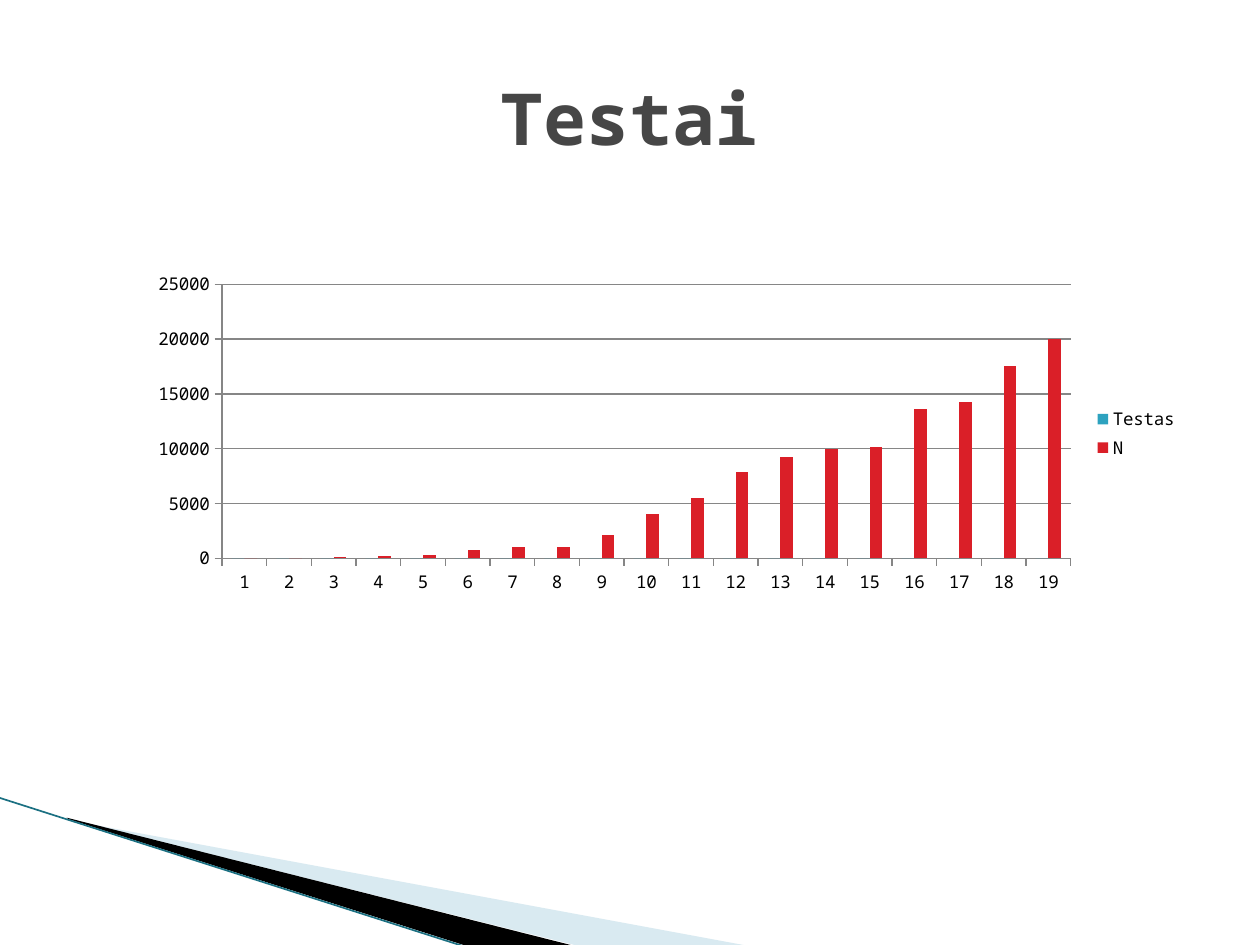
"""Build the test results slide with its column chart and corner ribbon."""
from lxml import etree
from pptx import Presentation
from pptx.chart.data import CategoryChartData
from pptx.dml.color import RGBColor
from pptx.enum.chart import XL_CHART_TYPE, XL_LEGEND_POSITION, XL_TICK_MARK
from pptx.enum.shapes import MSO_CONNECTOR
from pptx.enum.text import MSO_ANCHOR, PP_ALIGN
from pptx.oxml.ns import qn
from pptx.util import Inches, Pt

COLUMN = XL_CHART_TYPE.COLUMN_CLUSTERED
RIGHT = XL_LEGEND_POSITION.RIGHT
OUTSIDE, NONE = XL_TICK_MARK.OUTSIDE, XL_TICK_MARK.NONE
STRAIGHT = MSO_CONNECTOR.STRAIGHT
MIDDLE, CENTER = MSO_ANCHOR.MIDDLE, PP_ALIGN.CENTER

THEME = {
    "font": "Noto Sans Mono",
    "title": Pt(41),
    "label": Pt(10),
    "dark": RGBColor(0x46, 0x46, 0x46),
    "black": RGBColor(0, 0, 0),
    "grid": RGBColor(0x86, 0x86, 0x86),
    "pale": RGBColor(0xA0, 0xCB, 0xDC),
    "edge": RGBColor(0x1B, 0x70, 0x82),
    "bars": [RGBColor(0x2D, 0xA2, 0xBF), RGBColor(0xDA, 0x1F, 0x28)],
}


def assign(item, values):
    for name, value in values.items():
        setattr(item, name, value)


def reframe(shape, left, top, width, height):
    shift = {"x": shape.left - left, "y": shape.top - top}
    outline = shape._element.spPr.find(".//" + qn("a:path"))
    outline.set("w", str(width))
    outline.set("h", str(height))
    for spot in outline.iter(qn("a:pt")):
        for key, move in shift.items():
            spot.set(key, str(int(spot.get(key)) + move))
    assign(shape, {"left": left, "top": top, "width": width, "height": height})


deck = Presentation()
assign(deck, {"slide_width": Inches(10), "slide_height": Inches(7.5)})
slide = deck.slides.add_slide(deck.slide_layouts[6])
shapes = slide.shapes

bands = [
    ([(0.55, 6.51), (5.9, 7.5), (4.56, 7.5), (0.55, 6.5)],
     (0.78, 5.47, 4.16, 1.58), "pale", 40),
    ([(0.53, 6.49), (4.53, 7.5), (3.68, 7.5), (0.54, 6.5)],
     (-0.06, 6.33, 4.16, 0.92), "black", 100),
]
for points, frame, color, alpha in bands:
    spots = [(Inches(x), Inches(y)) for x, y in points]
    path = shapes.build_freeform(*spots[0])
    path.add_line_segments(spots[1:], close=True)
    band = path.convert_to_shape()
    reframe(band, *map(Inches, frame))
    band.shadow.inherit = False
    band.fill.solid()
    band.fill.fore_color.rgb = THEME[color]
    band.line.fill.background()
    if alpha < 100:
        tint = band.fill._xPr.find(".//" + qn("a:srgbClr"))
        etree.SubElement(tint, qn("a:alpha"), val=str(alpha * 1000))

edge = shapes.add_connector(
    STRAIGHT, Inches(-0.01), Inches(6.33), Inches(3.71), Inches(7.52))
edge.line.color.rgb = THEME["edge"]
edge.line.width = Pt(0.95)
etree.SubElement(edge._element.spPr, qn("a:effectLst"))

title = shapes.add_textbox(Inches(0.5), Inches(0.3), Inches(9), Inches(1.25))
assign(title.text_frame, {"word_wrap": True, "vertical_anchor": MIDDLE})
line = title.text_frame.paragraphs[0]
assign(line, {"text": "Testai", "alignment": CENTER})
assign(line.font, {"name": THEME["font"], "size": THEME["title"], "bold": True})
line.font.color.rgb = THEME["dark"]

sizes = [0, 0, 100, 200, 300, 700, 1000, 1000, 2100, 4000, 5500, 7900,
         9200, 10000, 10100, 13600, 14300, 17500, 20000]
data = CategoryChartData()
data.categories = [str(n + 1) for n in range(len(sizes))]
data.add_series("Testas", [0] * len(sizes))
data.add_series("N", sizes)
chart = shapes.add_chart(
    COLUMN, Inches(1.09), Inches(2.11), Inches(8.36), Inches(2.66), data).chart
assign(chart, {"has_title": False, "has_legend": True})
assign(chart.legend, {"position": RIGHT, "include_in_layout": False})
assign(chart.font, {"name": THEME["font"], "size": THEME["label"]})
chart.font.color.rgb = THEME["black"]

plot = chart.plots[0]
assign(plot, {"gap_width": 150, "overlap": 0, "vary_by_categories": False})
for series, color in zip(plot.series, THEME["bars"]):
    series.format.fill.solid()
    series.format.fill.fore_color.rgb = color

across, up = chart.category_axis, chart.value_axis
assign(across, {"has_major_gridlines": False})
assign(up, {"has_major_gridlines": True, "minimum_scale": 0,
            "maximum_scale": 25000, "major_unit": 5000})
for axis in (across, up):
    assign(axis, {"major_tick_mark": OUTSIDE, "minor_tick_mark": NONE})
for part in (across, up, up.major_gridlines):
    part.format.line.color.rgb = THEME["grid"]
    part.format.line.width = Pt(0.75)

deck.save("out.pptx")
